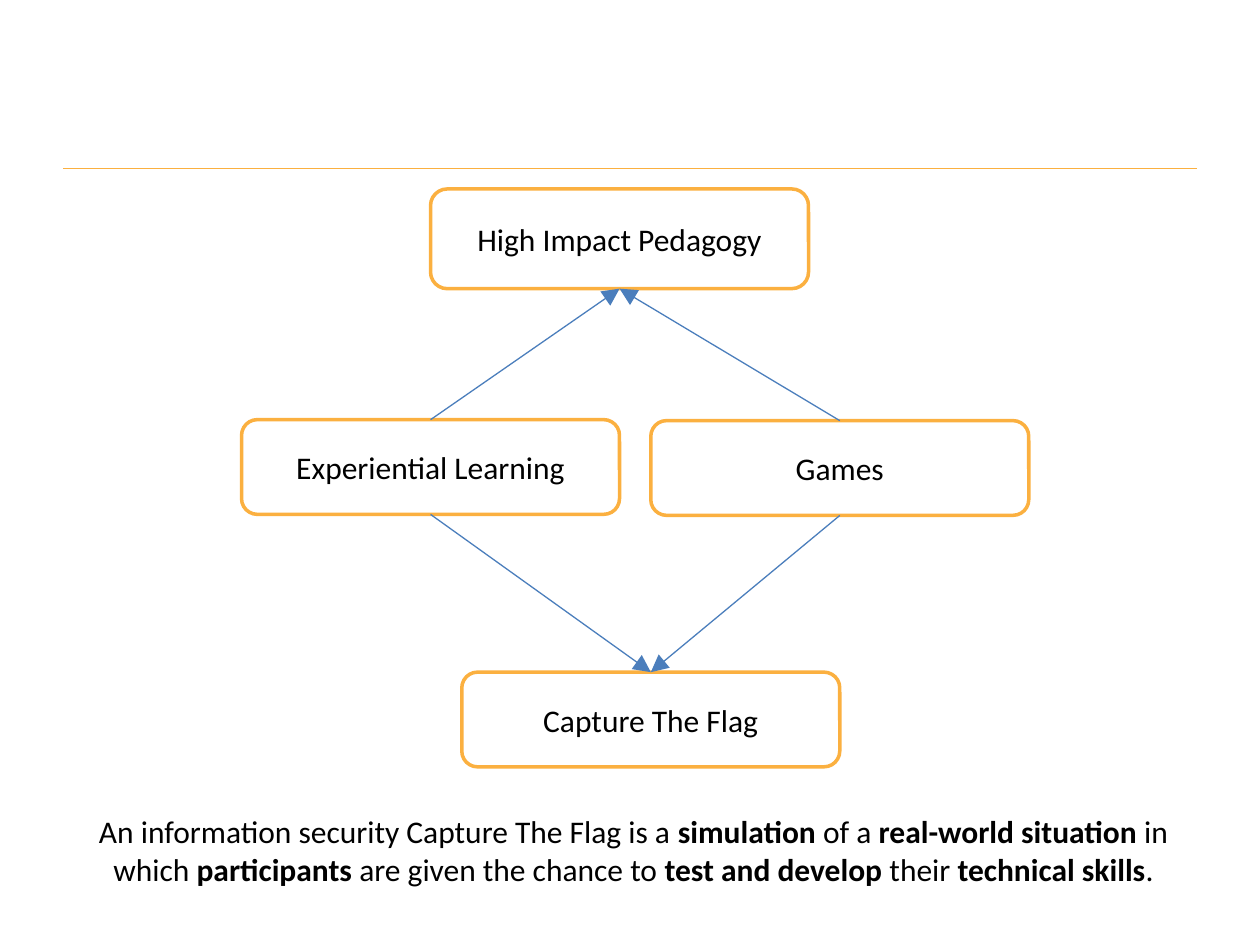
from dataclasses import dataclass

from lxml.etree import SubElement
from pptx import Presentation
from pptx.dml.color import RGBColor
from pptx.enum.shapes import MSO_CONNECTOR as Connector, MSO_SHAPE as Shape
from pptx.enum.text import MSO_ANCHOR as Anchor, PP_ALIGN as Align
from pptx.oxml.ns import qn
from pptx.util import Cm, Pt


@dataclass(frozen=True)
class Theme:
    font: str = "Calibri"
    text_size: Pt = Pt(18)
    text: RGBColor = RGBColor(0x00, 0x00, 0x00)
    box_fill: RGBColor = RGBColor(0xFF, 0xFF, 0xFF)
    accent: RGBColor = RGBColor(0xFB, 0xB0, 0x40)
    arrow: RGBColor = RGBColor(0x4B, 0x7E, 0xBC)
    box_line: Pt = Pt(2)
    thin_line: Pt = Pt(0.75)


THEME = Theme()
BOX_WIDTH = 7.62
TOP, BOTTOM = 0, 2  # connection sites of a rounded rectangle


def style_paragraph(paragraph):
    paragraph.alignment = Align.CENTER
    paragraph.font.name = THEME.font
    paragraph.font.size = THEME.text_size
    paragraph.font.color.rgb = THEME.text


def add_box(slide, label, left, top, height=1.91):
    shape = slide.shapes.add_shape(
        Shape.ROUNDED_RECTANGLE, Cm(left), Cm(top), Cm(BOX_WIDTH), Cm(height))
    shape.shadow.inherit = False
    shape.fill.solid()
    shape.fill.fore_color.rgb = THEME.box_fill
    shape.line.color.rgb = THEME.accent
    shape.line.width = THEME.box_line
    frame = shape.text_frame
    frame.vertical_anchor = Anchor.MIDDLE
    frame.text = label
    style_paragraph(frame.paragraphs[0])
    return shape


def add_line(slide, color, left=0, right=0, top=0):
    line = slide.shapes.add_connector(
        Connector.STRAIGHT, Cm(left), Cm(top), Cm(right), Cm(top))
    line.line.color.rgb = color
    line.line.width = THEME.thin_line
    SubElement(line._element.spPr, qn("a:effectLst"))
    return line


def add_arrow(slide, source, source_site, target, target_site):
    arrow = add_line(slide, THEME.arrow)
    arrow.begin_connect(source, source_site)
    arrow.end_connect(target, target_site)
    SubElement(arrow.line._get_or_add_ln(), qn("a:tailEnd"),
               type="triangle", w="lg", len="lg")


def add_caption(slide, runs, left, top, width, height):
    """Add a centred text box from (text, bold) pairs."""
    box = slide.shapes.add_textbox(Cm(left), Cm(top), Cm(width), Cm(height))
    box.text_frame.word_wrap = True
    paragraph = box.text_frame.paragraphs[0]
    style_paragraph(paragraph)
    for text, bold in runs:
        run = paragraph.add_run()
        run.text = text
        run.font.bold = bold


def main():
    presentation = Presentation()
    presentation.slide_width, presentation.slide_height = Cm(25.4), Cm(19.05)
    slide = presentation.slides.add_slide(presentation.slide_layouts[6])

    add_line(slide, THEME.accent, left=1.27, right=24.13, top=3.39)

    experiential = add_box(slide, "Experiential Learning", 4.87, 8.46)
    pedagogy = add_box(slide, "High Impact Pedagogy", 8.68, 3.81, height=2.01)
    games = add_box(slide, "Games", 13.12, 8.48)
    capture = add_box(slide, "Capture The Flag", 9.31, 13.55)

    for source in (experiential, games):
        add_arrow(slide, source, TOP, pedagogy, BOTTOM)
        add_arrow(slide, source, BOTTOM, capture, TOP)

    add_caption(slide, [
        ("An information security Capture The Flag is a ", False),
        ("simulation", True),
        (" of a ", False),
        ("real-world situation ", True),
        ("in which ", False),
        ("participants", True),
        (" are given the chance to ", False),
        ("test and develop ", True),
        ("their ", False),
        ("technical skills", True),
        (".", False),
    ], left=0.92, top=16.25, width=23.7, height=1.8)

    presentation.save("out.pptx")


if __name__ == "__main__":
    main()
